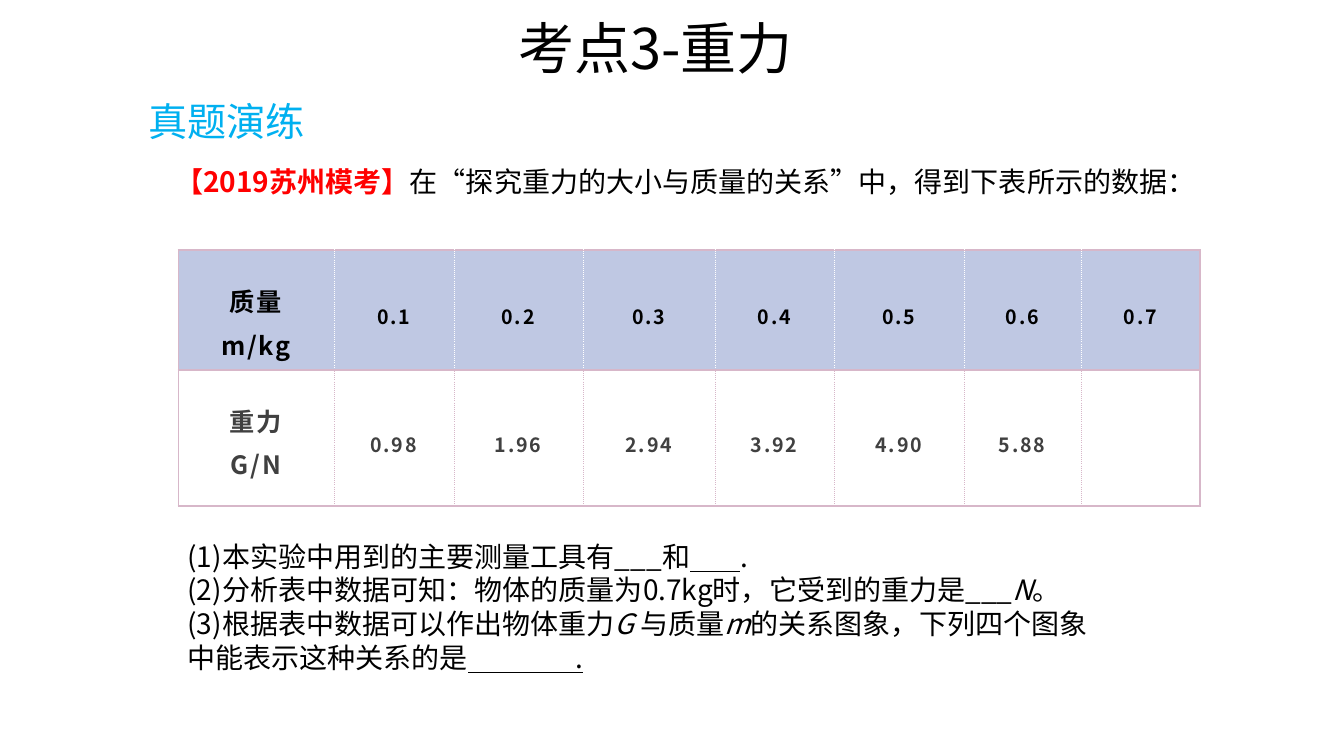
from dataclasses import dataclass

from lxml.etree import SubElement
from pptx import Presentation
from pptx.dml.color import RGBColor
from pptx.enum.text import MSO_ANCHOR, MSO_AUTO_SIZE, PP_ALIGN
from pptx.oxml.ns import qn
from pptx.util import Inches, Pt


@dataclass(frozen=True)
class Theme:
    font: str = "Noto Sans CJK SC"
    heading_font: str = "Noto Sans CJK JP"
    black: str = "000000"
    white: str = "FFFFFF"
    blue: str = "00B0F0"
    red: str = "FF0000"
    grey: str = "404040"
    header_fill: str = "BFC8E3"
    border: str = "D7B7C9"
    title_size: float = 40
    subtitle_size: float = 28
    body_size: float = 20
    label_size: float = 18
    value_size: float = 14
    line_spacing: float = 1.0
    table_spacing: float = 1.2


THEME = Theme()


@dataclass(frozen=True)
class Box:
    left: float
    top: float
    width: float
    height: float

    def lengths(self):
        return tuple(Inches(v) for v in (self.left, self.top, self.width, self.height))


@dataclass(frozen=True)
class Piece:
    """A stretch of text with one format."""
    text: str
    size: float = THEME.body_size
    color: str = THEME.black
    font: str = THEME.font
    bold: bool = False
    italic: bool = False
    underline: bool = False


@dataclass(frozen=True)
class TableRow:
    cells: tuple[str, ...]
    height: float
    label_bottom: float
    fill: str
    color: str
    divider: str


TITLE_BOX = Box(4.54, 0.08, 4.93, 0.77)
SUBTITLE_BOX = Box(1.37, 0.92, 2.97, 0.57)
INTRO_BOX = Box(1.64, 1.58, 10.05, 0.77)
TABLE_BOX = Box(1.77, 2.48, 10.13, 2.54)
QUESTIONS_BOX = Box(1.76, 5.3, 9.4, 1.45)

TITLE = [[Piece("考点3-重力", THEME.title_size, font=THEME.heading_font)]]
SUBTITLE = [[Piece("真题演练", THEME.subtitle_size, THEME.blue, THEME.heading_font)]]
INTRO = [[
    Piece("【2019苏州模考】", color=THEME.red, bold=True),
    Piece("在“探究重力的大小与质量的关系”中，得到下表所示的数据："),
]]
QUESTIONS = [
    [
        Piece("(1)本实验中用到的主要测量工具有___和"),
        Piece(" " * 8, underline=True),
        Piece("."),
    ],
    [
        Piece("(2)分析表中数据可知：物体的质量为0.7kg时，它受到的重力是___"),
        Piece("N", italic=True),
        Piece("。"),
    ],
    [
        Piece("(3)根据表中数据可以作出物体重力"),
        Piece("G ", italic=True),
        Piece("与质量"),
        Piece("m", italic=True),
        Piece("的关系图象，下列四个图象中能表示这种关系的是"),
        Piece(" " * 17 + ".", underline=True),
    ],
]
COLUMN_WIDTHS = (1.54, 1.19, 1.28, 1.31, 1.18, 1.29, 1.16, 1.18)
ROWS = (
    TableRow(("质量m/kg", "0.1", "0.2", "0.3", "0.4", "0.5", "0.6", "0.7"),
             1.19, 0.07, THEME.header_fill, THEME.black, THEME.white),
    TableRow(("重力G/N", "0.98", "1.96", "2.94", "3.92", "4.90", "5.88", ""),
             1.35, 0.23, THEME.white, THEME.grey, THEME.border),
)


def format_run(run, piece: Piece) -> None:
    font = run.font
    font.name = piece.font
    font.size = Pt(piece.size)
    font.bold = piece.bold
    font.italic = piece.italic
    font.underline = piece.underline
    font.color.rgb = RGBColor.from_string(piece.color)
    SubElement(font._element, qn("a:ea")).set("typeface", piece.font)


def write_text(shape, paragraphs: list[list[Piece]], left_margin: float = 0.1) -> None:
    """Fill a shape with left-aligned, unbulleted paragraphs."""
    frame = shape.text_frame
    frame.word_wrap = True
    frame.auto_size = MSO_AUTO_SIZE.NONE
    frame.vertical_anchor = MSO_ANCHOR.TOP
    frame.margin_left = Inches(left_margin)
    for index, pieces in enumerate(paragraphs):
        paragraph = frame.add_paragraph() if index else frame.paragraphs[0]
        paragraph.alignment = PP_ALIGN.LEFT
        paragraph.line_spacing = THEME.line_spacing
        paragraph.space_before = Pt(0)
        properties = paragraph._p.get_or_add_pPr()
        properties.set("marL", "0")
        properties.set("indent", "0")
        SubElement(properties, qn("a:buNone"))
        for piece in pieces:
            run = paragraph.add_run()
            run.text = piece.text
            format_run(run, piece)


def place(shape, box: Box) -> None:
    shape.left, shape.top, shape.width, shape.height = box.lengths()


def add_border(cell, side: str, color: str, width: float, dash: str) -> None:
    line = SubElement(cell._tc.get_or_add_tcPr(), qn(f"a:ln{side}"), w=str(Pt(width)))
    fill = SubElement(line, qn("a:solidFill"))
    SubElement(fill, qn("a:srgbClr"), val=color)
    SubElement(line, qn("a:prstDash"), val=dash)


def format_cell(cell, row: TableRow, column: int) -> None:
    solid = (THEME.border, 1.5, "solid")
    dotted = (row.divider, 0.25, "dot")
    add_border(cell, "L", *(solid if column == 0 else dotted))
    add_border(cell, "R", *(solid if column == len(COLUMN_WIDTHS) - 1 else dotted))
    add_border(cell, "T", *solid)
    add_border(cell, "B", *solid)
    cell.fill.solid()
    cell.fill.fore_color.rgb = RGBColor.from_string(row.fill)
    cell.vertical_anchor = MSO_ANCHOR.MIDDLE
    cell.margin_left = cell.margin_right = Inches(0.25 if column else 0.35)
    cell.margin_top = Inches(0.24)
    cell.margin_bottom = Inches(0.18 if column else row.label_bottom)

    cell.text = row.cells[column]
    paragraph = cell.text_frame.paragraphs[0]
    paragraph.alignment = PP_ALIGN.CENTER
    paragraph.line_spacing = THEME.table_spacing
    size = THEME.value_size if column else THEME.label_size
    for run in paragraph.runs:
        format_run(run, Piece(run.text, size, row.color, bold=True))
        run.font._element.set("spc", "130")


def add_data_table(slide) -> None:
    frame = slide.shapes.add_table(len(ROWS), len(COLUMN_WIDTHS), *TABLE_BOX.lengths())
    table = frame.table
    table.first_row = table.horz_banding = False
    for column, width in zip(table.columns, COLUMN_WIDTHS):
        column.width = Inches(width)
    for row_index, row in enumerate(ROWS):
        table.rows[row_index].height = Inches(row.height)
        for column_index in range(len(COLUMN_WIDTHS)):
            format_cell(table.cell(row_index, column_index), row, column_index)


def main() -> None:
    presentation = Presentation()
    presentation.slide_width = Inches(13.33)
    presentation.slide_height = Inches(7.5)
    slide = presentation.slides.add_slide(presentation.slide_layouts[1])
    title, questions = slide.placeholders
    place(title, TITLE_BOX)
    write_text(title, TITLE, left_margin=0.6)
    for box, paragraphs in ((SUBTITLE_BOX, SUBTITLE), (INTRO_BOX, INTRO)):
        write_text(slide.shapes.add_textbox(*box.lengths()), paragraphs)
    add_data_table(slide)
    place(questions, QUESTIONS_BOX)
    write_text(questions, QUESTIONS)
    presentation.save("out.pptx")


if __name__ == "__main__":
    main()
